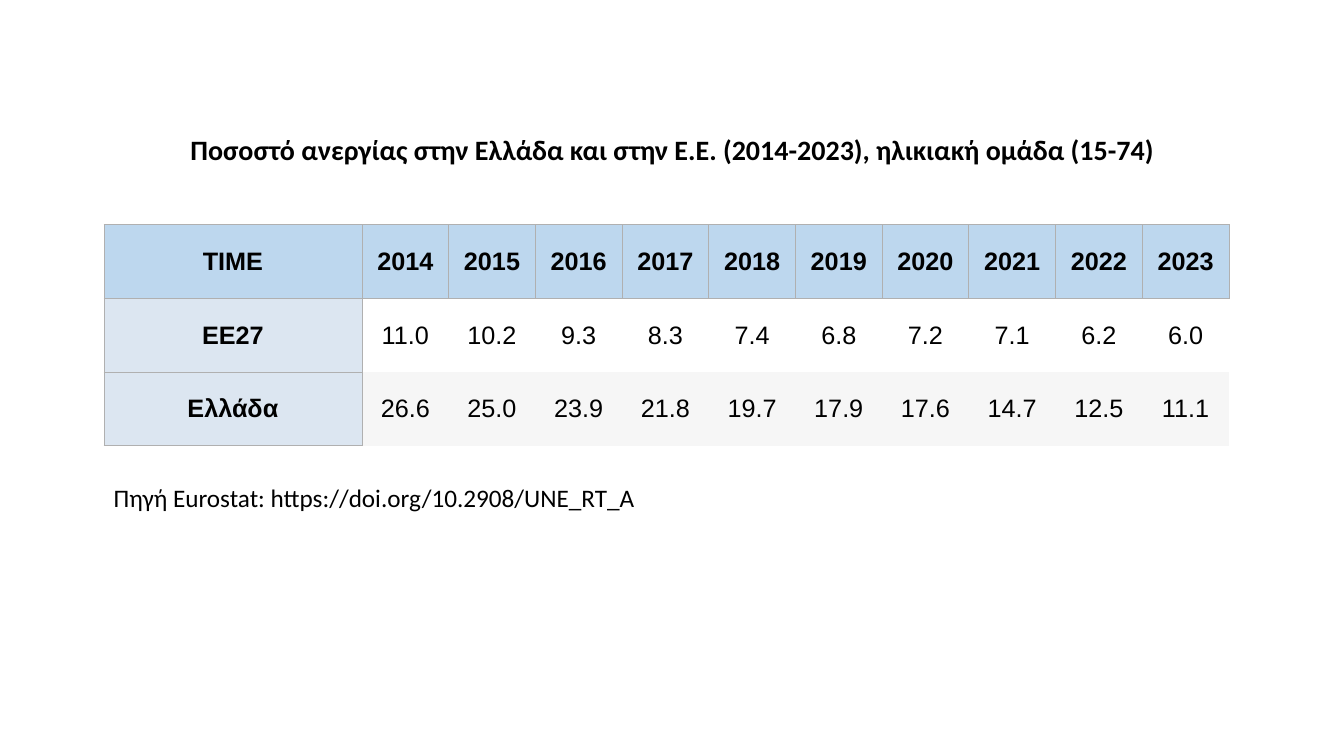
from lxml import etree
from pptx import Presentation
from pptx.dml.color import RGBColor
from pptx.enum.text import MSO_ANCHOR, PP_ALIGN
from pptx.oxml.ns import qn
from pptx.util import Inches, Pt

CENTER, LEFT = PP_ALIGN.CENTER, PP_ALIGN.LEFT
MIDDLE = MSO_ANCHOR.MIDDLE
ROWS = [
    ["TIME", *(str(year) for year in range(2014, 2024))],
    ["ΕΕ27", "11.0", "10.2", "9.3", "8.3", "7.4", "6.8", "7.2", "7.1", "6.2", "6.0"],
    ["Ελλάδα", "26.6", "25.0", "23.9", "21.8", "19.7", "17.9", "17.6", "14.7", "12.5", "11.1"],
]
TEXTS = [
    ("Ποσοστό ανεργίας στην Ελλάδα και στην Ε.Ε. (2014-2023), ηλικιακή ομάδα (15-74)",
     (1.75, 1.27, 9.84, 0.44), 20, True, CENTER),
    ("Πηγή Eurostat: https://doi.org/10.2908/UNE_RT_A",
     (1.03, 4.74, 5.43, 0.4), 18, False, LEFT),
]


def rgb(color):
    return RGBColor.from_string(color)


def style(p, name, size, bold, align):
    p.alignment = align
    p.font.name = name
    p.font.size = Pt(size)
    p.font.bold = bold
    p.font.color.rgb = rgb("000000")


prs = Presentation()
prs.slide_width, prs.slide_height = Inches(13.33), Inches(7.5)
s = prs.slides.add_slide(prs.slide_layouts[6])

# Unemployment table
frame = s.shapes.add_table(3, 11, Inches(1.03), Inches(2.23), Inches(11.16), Inches(2.19))
table = frame.table
table.first_row = table.horz_banding = False
for c, column in enumerate(table.columns):
    column.width = Inches(0.86 if c else 2.56)

for r, values in enumerate(ROWS):
    table.rows[r].height = Inches(0.73)
    for c, value in enumerate(values):
        cell = table.cell(r, c)
        heading = r == 0 or c == 0
        cell.text = value
        cell.vertical_anchor = MIDDLE
        cell.margin_left = cell.margin_right = cell.margin_top = Inches(0.01)
        cell.margin_bottom = 0
        style(cell.text_frame.paragraphs[0], "Arial", 18, heading, CENTER)

        # Header row, label column, then a grey band for the last row
        fill = "BDD7EE" if r == 0 else "DCE6F1" if c == 0 else "F6F6F6" if r == 2 else None
        if fill:
            cell.fill.solid()
            cell.fill.fore_color.rgb = rgb(fill)
        else:
            cell.fill.background()

        # Data cells only share the borders of the headings
        borders = {"L": heading or c == 1, "R": heading, "T": heading or r == 1, "B": heading}
        tcPr = cell._tc.get_or_add_tcPr()
        for i, (side, shown) in enumerate(borders.items()):
            ln = etree.Element(qn("a:ln" + side), w=str(Pt(0.5) if shown else 0))
            if shown:
                solid = etree.SubElement(ln, qn("a:solidFill"))
                etree.SubElement(solid, qn("a:srgbClr"), val="B0B0B0")
            else:
                etree.SubElement(ln, qn("a:noFill"))
            tcPr.insert(i, ln)

# Title and source
for text, box, size, bold, align in TEXTS:
    sp = s.shapes.add_textbox(*map(Inches, box))
    tf = sp.text_frame
    tf.word_wrap = False
    tf.text = text
    style(tf.paragraphs[0], "Calibri", size, bold, align)

prs.save("out.pptx")
